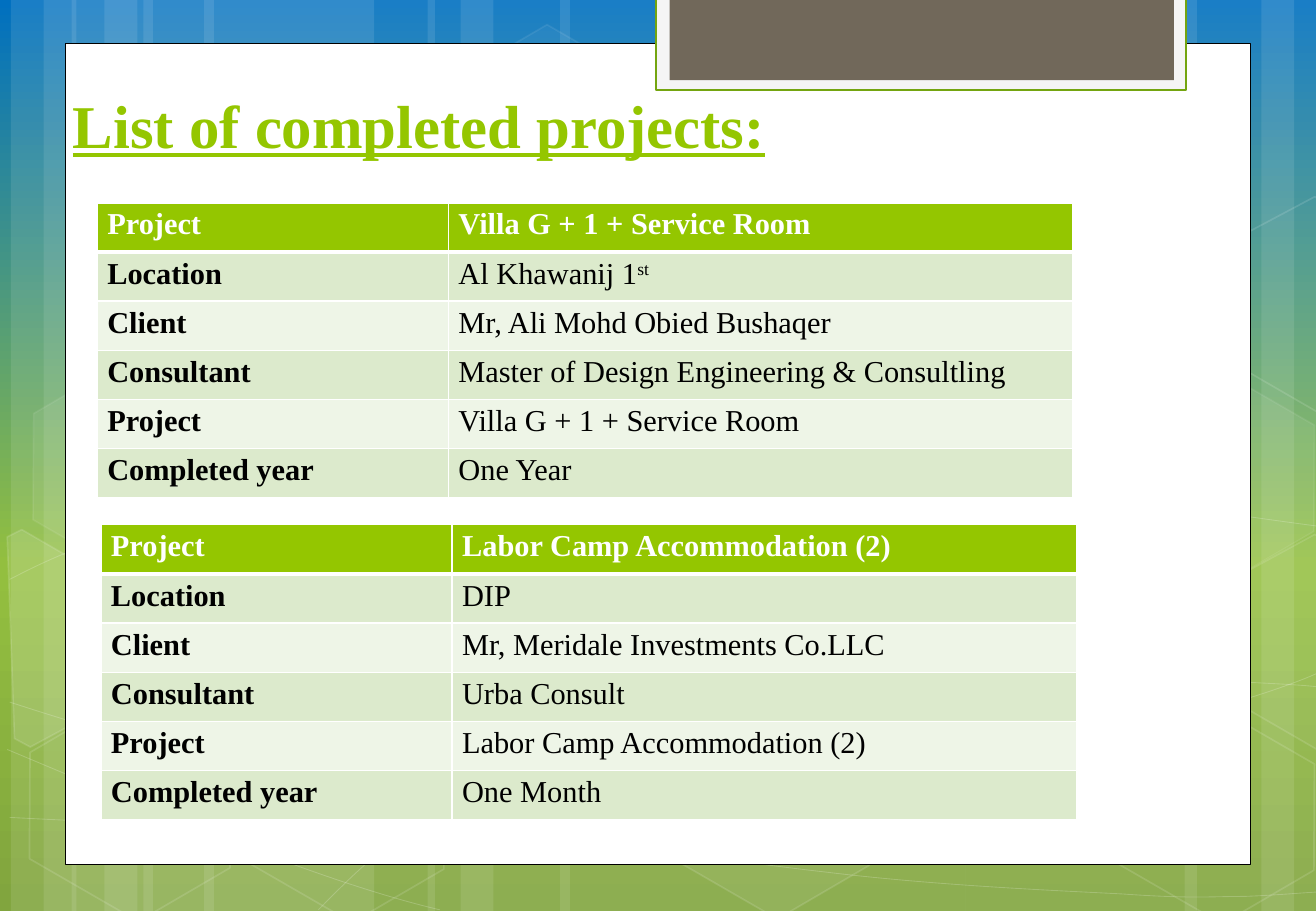
from copy import deepcopy

from lxml.etree import SubElement
from pptx import Presentation
from pptx.dml.color import RGBColor as Rgb
from pptx.enum.shapes import MSO_SHAPE as Preset
from pptx.enum.text import MSO_ANCHOR as Anchor, MSO_AUTO_SIZE as AutoSize, PP_ALIGN as Align
from pptx.oxml.ns import qn
from pptx.util import Inches, Pt

COLUMN = ROW = Inches(1)
COLUMNS, ROWS = 10.83, 7.5
FONT = "Times New Roman"
COLORS = {
    "white": "FFFFFF", "black": "000000", "lime": "94C600", "frame": "74A510",
    "tab": "F5F5F5", "brown": "71685A", "odd": "DCEACC", "even": "EEF5E7",
    "sky": "0070C0", "grass": "93BF3F", "moss": "81A53E",
}
SKY_STOPS = [(0, "sky"), (0.62, "grass"), (1, "moss")]
STRIPES = [
    (1.18, 1.9), (0.09, 0.54), (0.36, 0.9), (1.68, 1.9), (0.59, 0.54), (0.86, 0.9),
    (7.95, 1.9), (10.38, 0.54), (9.75, 0.9), (4.61, 3.34), (3.52, 0.54), (3.79, 0.9),
]
CURVES = [
    [(0.08, 6.73), (0.66, 6.76), (1.25, 6.79), (2.06, 6.78), (2.88, 6.77), (3.87, 6.75),
     (4.96, 6.65), (6.05, 6.55), (7.58, 6.36), (8.58, 6.17), (9.57, 5.98), (10.58, 5.68),
     (10.91, 5.51)],
    [(0.08, 4.77), (0.39, 4.61), (0.7, 4.46), (1.32, 4.31), (1.93, 4.16), (2.8, 3.94),
     (3.76, 3.87), (4.73, 3.8), (5.89, 3.79), (7.08, 3.87), (8.28, 3.95), (10.26, 4.26),
     (10.91, 4.34)],
    [(0.06, 6.17), (1.37, 6.72), (2.68, 7.27), (3.62, 7.49)],
    [(0.08, 5.78), (0.42, 5.89), (0.76, 6), (1.39, 6.16), (2.02, 6.31), (2.96, 6.56),
     (3.86, 6.73), (4.77, 6.9), (5.91, 7.08), (6.8, 7.18), (7.7, 7.29), (8.66, 7.33),
     (9.24, 7.36), (9.81, 7.4), (9.96, 7.38), (10.24, 7.38), (10.51, 7.37), (10.71, 7.35),
     (10.91, 7.34)],
    [(2.62, 7.49), (2.82, 7.29), (3.01, 7.09), (3.27, 6.91), (3.53, 6.73), (3.9, 6.53),
     (4.2, 6.39), (4.5, 6.25), (4.69, 6.19), (5.09, 6.09), (5.49, 5.99), (6.21, 5.85),
     (6.59, 5.78), (6.97, 5.71), (7.03, 5.71), (7.37, 5.69), (7.7, 5.66), (8.23, 5.63),
     (8.6, 5.62), (8.98, 5.61), (9.6, 5.62), (9.6, 5.62), (9.84, 5.62), (10.08, 5.62),
     (10.32, 5.62), (10.52, 5.63), (10.7, 5.64), (10.8, 5.65), (10.89, 5.66), (10.86, 5.65),
     (10.9, 5.66)],
]
HEXAGONS = [
    (3.62, 0.36, 4, 8), (5.38, 5.89, 6, 12), (0.12, 5.91, 0, 12), (0.15, 3.12, 7, 8),
    (1.88, 5.92, 0, 12), (8.16, 4.53, 10, 12), (9.04, 5.93, 0, 12), (9.04, 3.14, 7, 8),
]
SHARDS = [
    ([(0.06, 4.42), (0.18, 4.36), (1.01, 4.84), (1.03, 5.73), (0.25, 6.15), (0.12, 6.08)], 10),
    ([(10.03, 4.83), (10.82, 4.4), (10.9, 4.45), (10.96, 6.16), (10.89, 6.2), (10.06, 5.72)], 4),
    ([(10.03, 2.04), (10.82, 1.62), (10.91, 1.67), (10.96, 3.38), (10.89, 3.42), (10.06, 2.94)], 0),
]
FIELDS = ["Project", "Location", "Client", "Consultant", "Project", "Completed year"]
VILLA = ["Villa G + 1 + Service Room", "Al Khawanij 1^st", "Mr, Ali Mohd Obied Bushaqer",
         "Master of Design Engineering & Consultling", "Villa G + 1 + Service Room", "One Year"]
CAMP = ["Labor Camp Accommodation (2)", "DIP", "Mr, Meridale Investments Co.LLC",
        "Urba Consult", "Labor Camp Accommodation (2)", "One Month"]


def place(column, row, columns, rows):
    return [round(n) for n in (column * COLUMN, row * ROW, columns * COLUMN, rows * ROW)]


def apply(target, formats):
    for key, value in formats.items():
        setattr(target, key, value)


def tint(paint, color, opacity, holder):
    if not color or not opacity:
        paint.background()
        return
    paint.solid()
    paint.fore_color.rgb = Rgb.from_string(COLORS[color])
    if opacity < 100:
        hue = holder.find(qn("a:solidFill")).find(qn("a:srgbClr"))
        SubElement(hue, qn("a:alpha"), val=str(opacity * 1000))


def dress(shape, fill=None, fill_opacity=100, line=None, width=1, line_opacity=100):
    shape.shadow.inherit = False
    properties = shape.element.spPr
    tint(shape.fill, fill, fill_opacity, properties)
    shape.line.width = Pt(width)
    tint(shape.line.fill, line, line_opacity, properties.find(qn("a:ln")))


def add_block(slide, area, preset=Preset.RECTANGLE, **paint):
    block = slide.shapes.add_shape(preset, *place(*area))
    dress(block, **paint)
    return block


def add_outline(slide, points, closed, **paint):
    spots = [(round(x * COLUMN), round(y * ROW)) for x, y in points]
    builder = slide.shapes.build_freeform(*spots[0], scale=1.0)
    builder.add_line_segments(spots[1:], close=closed)
    outline = builder.convert_to_shape()
    dress(outline, **paint)
    return outline


def add_curve(slide, knots):
    curve = add_outline(slide, knots, False, line="white", width=0.5, line_opacity=20)
    steps = curve.element.findall(".//" + qn("a:lnTo"))
    route = steps[0].getparent()
    for first in range(0, len(steps), 3):
        bend = SubElement(route, qn("a:cubicBezTo"))
        for step in steps[first:first + 3]:
            bend.append(step[0])
            route.remove(step)


def paint_sky(slide):
    sky = slide.background.fill
    sky.gradient()
    sky.gradient_angle = 270
    stops = slide.element.find(".//" + qn("a:gsLst"))
    stops.append(deepcopy(stops[0]))
    for stop, (position, color) in zip(sky.gradient_stops, SKY_STOPS):
        stop.position = position
        stop.color.rgb = Rgb.from_string(COLORS[color])


def add_backdrop(slide):
    for column, columns in STRIPES:
        add_block(slide, (column, 0, columns, ROWS), fill="white", fill_opacity=10)
    for knots in CURVES:
        add_curve(slide, knots)
    for column, row, fill_opacity, line_opacity in HEXAGONS:
        hexagon = add_block(slide, (column, row, 1.9, 1.52), Preset.HEXAGON, fill="white",
                            fill_opacity=fill_opacity, line="white", line_opacity=line_opacity)
        hexagon.rotation = 30
        hexagon.adjustments[0] = 0.285
    for points, opacity in SHARDS:
        add_outline(slide, points, True, fill="white", fill_opacity=opacity,
                    line="white", line_opacity=12)
    add_block(slide, (0.54, 0.36, 9.75, 6.76), fill="white", line="black", width=0.5)
    add_block(slide, (5.4, -0.02, 4.36, 0.76), fill="tab", line="frame", width=1.25)
    add_block(slide, (5.51, -0.02, 4.15, 0.68), fill="brown")


def write(paragraph, text, color, **formats):
    run = paragraph.add_run()
    run.text = text
    apply(run.font, {"name": FONT, **formats})
    run.font.color.rgb = Rgb.from_string(COLORS[color])
    return run


def add_heading(slide, text):
    heading = slide.shapes.title
    slide.shapes.element.append(heading.element)
    apply(heading, dict(zip(("left", "top", "width", "height"), place(0.5, 0.58, 8.32, 0.79))))
    apply(heading.text_frame, {"vertical_anchor": Anchor.BOTTOM, "word_wrap": True,
                               "auto_size": AutoSize.NONE})
    paragraph = heading.text_frame.paragraphs[0]
    paragraph.alignment = Align.LEFT
    write(paragraph, text, "lime", size=Pt(36), bold=True, underline=True)


def rule_cell(cell, widths):
    for side, width in widths.items():
        border = SubElement(cell._tc.get_or_add_tcPr(), qn("a:" + side), w=str(Pt(width)))
        SubElement(SubElement(border, qn("a:solidFill")), qn("a:srgbClr"), val=COLORS["white"])


def fill_cell(cell, text, row, bold):
    rule_cell(cell, {"lnL": 1, "lnR": 1, "lnT": 3 if row == 1 else 1, "lnB": 1 if row else 3})
    cell.fill.solid()
    band = "lime" if row == 0 else ("odd" if row % 2 else "even")
    cell.fill.fore_color.rgb = Rgb.from_string(COLORS[band])
    apply(cell, {"margin_left": Pt(6), "margin_right": Pt(6),
                 "margin_top": 0, "margin_bottom": 0, "vertical_anchor": Anchor.TOP})
    paragraph = cell.text_frame.paragraphs[0]
    paragraph.line_spacing = 1.15
    base, _, raised = text.partition("^")
    style = {"color": "black" if row else "white", "size": Pt(18), "bold": bold}
    write(paragraph, base, **style)
    if raised:
        write(paragraph, raised, **style)._r.get_or_add_rPr().set("baseline", "30000")


def add_project(slide, column, row, details):
    frame = slide.shapes.add_table(len(FIELDS), 2, *place(column, row, 8.03, 2.43))
    project = frame.table
    project.horz_banding = False
    for part, columns in zip(project.columns, (2.89, 5.14)):
        part.width = round(columns * COLUMN)
    for index, (field, detail) in enumerate(zip(FIELDS, details)):
        fill_cell(project.cell(index, 0), field, index, True)
        fill_cell(project.cell(index, 1), detail, index, index == 0)


def main():
    deck = Presentation()
    apply(deck, {"slide_width": round(COLUMNS * COLUMN), "slide_height": round(ROWS * ROW)})
    slide = deck.slides.add_slide(deck.slide_layouts[5])
    paint_sky(slide)
    add_backdrop(slide)
    add_heading(slide, "List of completed projects:")
    add_project(slide, 0.8, 1.67, VILLA)
    add_project(slide, 0.83, 4.32, CAMP)
    deck.save("out.pptx")


if __name__ == "__main__":
    main()
